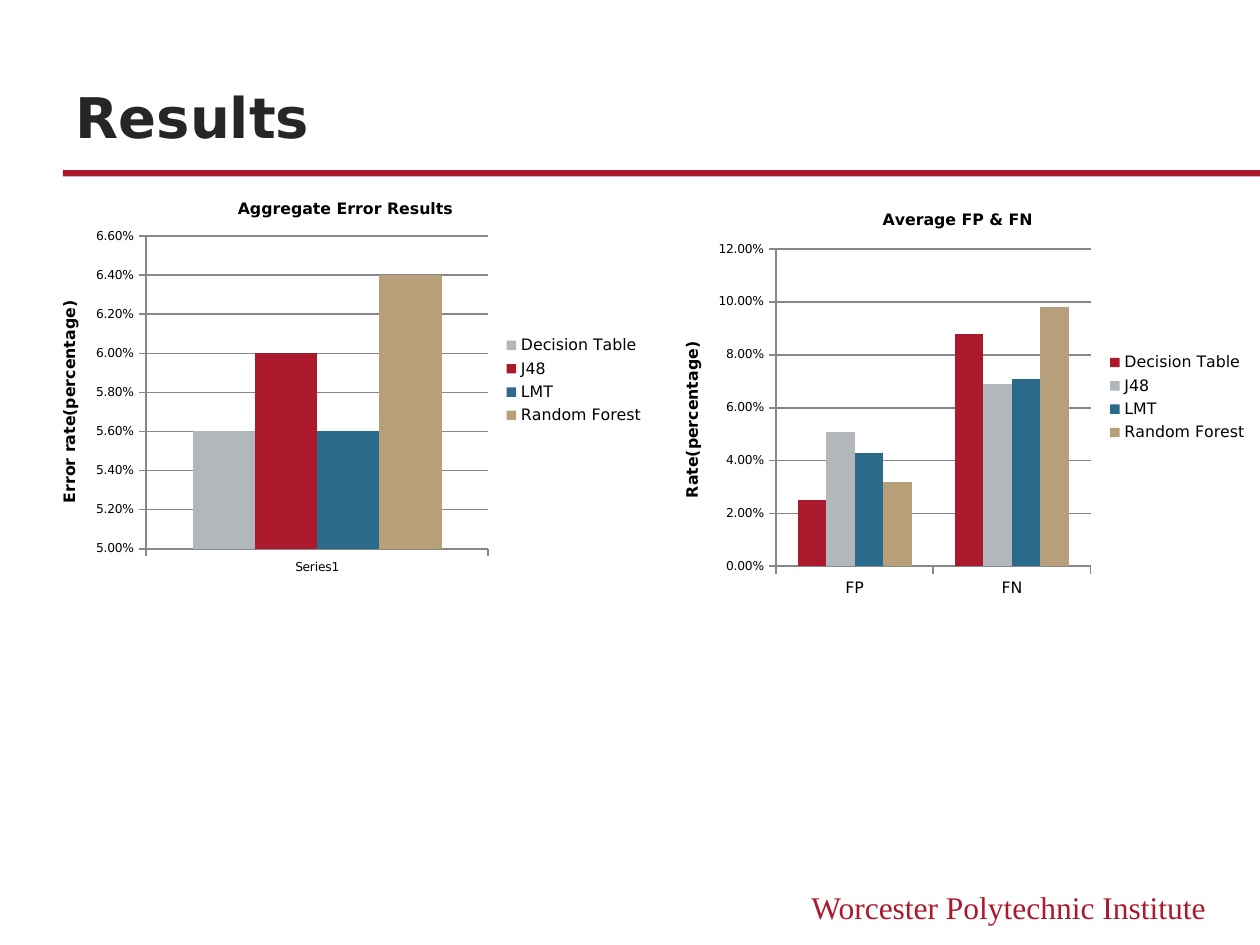
from lxml import etree
from pptx import Presentation
from pptx import util as u
from pptx.chart.data import CategoryChartData
from pptx.dml.color import RGBColor
from pptx.enum import chart as charts, shapes, text
from pptx.oxml.ns import qn

RED = RGBColor(0xAB, 0x19, 0x2D)
SILVER = RGBColor(0xB2, 0xB7, 0xBB)
BLUE = RGBColor(0x2C, 0x6A, 0x8C)
TAN = RGBColor(0xB7, 0xA0, 0x79)
DARK = RGBColor(0x26, 0x26, 0x26)
BLACK = RGBColor(0, 0, 0)
GREY = RGBColor(0x87, 0x87, 0x87)
SANS, SERIF = "DejaVu Sans", "Times New Roman"
MODELS = ["Decision Table", "J48", "LMT", "Random Forest"]


def box(left, top, width, height):
    return [u.Inches(value) for value in (left, top, width, height)]


def style_font(font, size, color=BLACK, bold=False, name=SANS):
    font.name = name
    font.size = u.Pt(size)
    font.bold = bold
    font.color.rgb = color


def add_title(slide, wording):
    title = slide.shapes.title
    title.left, title.top, title.width, title.height = box(0.5, 0.38, 9, 0.88)
    title.text_frame.text = wording
    title.text_frame.vertical_anchor = text.MSO_ANCHOR.BOTTOM
    title.text_frame.margin_bottom = u.Inches(0.07)
    paragraph = title.text_frame.paragraphs[0]
    paragraph.alignment = text.PP_ALIGN.LEFT
    style_font(paragraph.runs[0].font, 32, DARK, bold=True)


def add_rule(slide):
    rule = slide.shapes.add_shape(shapes.MSO_SHAPE.RECTANGLE, *box(0.5, 1.35, 9.5, 0.05))
    rule.shadow.inherit = False
    rule.fill.solid()
    rule.fill.fore_color.rgb = RED
    rule.line.fill.background()


def add_footer(slide, wording):
    footer = slide.shapes.add_textbox(*box(6, 7, 3.67, 0.4))
    footer.text_frame.word_wrap = True
    footer.text_frame.text = wording
    paragraph = footer.text_frame.paragraphs[0]
    paragraph.alignment = text.PP_ALIGN.RIGHT
    style_font(paragraph.runs[0].font, 18, RED, name=SERIF)


def set_heading(owner, wording):
    """Give a chart or an axis its bold title."""
    frame = (owner.chart_title if hasattr(owner, "chart_title") else owner.axis_title).text_frame
    frame.text = wording
    style_font(frame.paragraphs[0].runs[0].font, 9, bold=True)


def place_plot(chart, fractions):
    """Fix the inner plot area as fractions of the chart: x, y, w, h."""
    plot_area = chart._chartSpace.chart.plotArea
    for old in plot_area.findall(qn("c:layout")):
        plot_area.remove(old)
    layout = etree.Element(qn("c:layout"))
    manual = etree.SubElement(layout, qn("c:manualLayout"))
    settings = [("layoutTarget", "inner"), ("xMode", "edge"), ("yMode", "edge")]
    for tag, value in settings + list(zip("xywh", fractions)):
        etree.SubElement(manual, qn("c:" + tag)).set("val", str(value))
    plot_area.insert(0, layout)


def add_column_chart(slide, place, plot_place, title, axis_title, categories,
                     rows, colors, scale, category_size):
    data = CategoryChartData(number_format="0.00%")
    data.categories = categories
    for model, values in zip(MODELS, rows):
        data.add_series(model, values)
    chart = slide.shapes.add_chart(
        charts.XL_CHART_TYPE.COLUMN_CLUSTERED, *box(*place), data).chart
    style_font(chart.font, 9)
    set_heading(chart, title)
    chart.chart_title.include_in_layout = False

    # Columns
    plot = chart.plots[0]
    plot.gap_width, plot.overlap, plot.vary_by_categories = 150, 0, False
    for series, color in zip(plot.series, colors):
        series.format.fill.solid()
        series.format.fill.fore_color.rgb = color
        series.invert_if_negative = False

    # Axes
    value_axis, category_axis = chart.value_axis, chart.category_axis
    set_heading(value_axis, axis_title)
    value_axis.minimum_scale, value_axis.maximum_scale, value_axis.major_unit = scale
    value_axis.tick_labels.number_format = "0.00%"
    value_axis.tick_labels.number_format_is_linked = False
    value_axis.has_major_gridlines = True
    for axis, size in ((value_axis, 7), (category_axis, category_size)):
        axis.major_tick_mark = charts.XL_TICK_MARK.OUTSIDE
        style_font(axis.tick_labels.font, size)
    for part in (value_axis, category_axis, value_axis.major_gridlines):
        part.format.line.color.rgb = GREY
        part.format.line.width = u.Pt(1)

    # Legend
    chart.has_legend = True
    chart.legend.position = charts.XL_LEGEND_POSITION.RIGHT
    chart.legend.include_in_layout = False
    style_font(chart.legend.font, 9)
    place_plot(chart, plot_place)


def main():
    presentation = Presentation()
    presentation.slide_width, presentation.slide_height = u.Inches(10), u.Inches(7.5)
    slide = presentation.slides.add_slide(presentation.slide_layouts[5])
    add_rule(slide)
    add_footer(slide, "Worcester Polytechnic Institute")
    add_title(slide, "Results")
    add_column_chart(
        slide, (0.27, 1.43, 4.94, 3.18), (0.18, 0.14, 0.55, 0.78),
        "Aggregate Error Results", "Error rate(percentage)", ["Series1"],
        [[0.056], [0.06], [0.056], [0.064]],
        [SILVER, RED, BLUE, TAN], (0.05, 0.066, 0.002), 7)
    add_column_chart(
        slide, (5.2, 1.52, 4.8, 3.27), (0.2, 0.14, 0.52, 0.77),
        "Average FP & FN", "Rate(percentage)", ["FP", "FN"],
        [[0.025, 0.088], [0.051, 0.069], [0.043, 0.071], [0.032, 0.098]],
        [RED, SILVER, BLUE, TAN], (0, 0.12, 0.02), 9)
    presentation.save("out.pptx")


if __name__ == "__main__":
    main()
